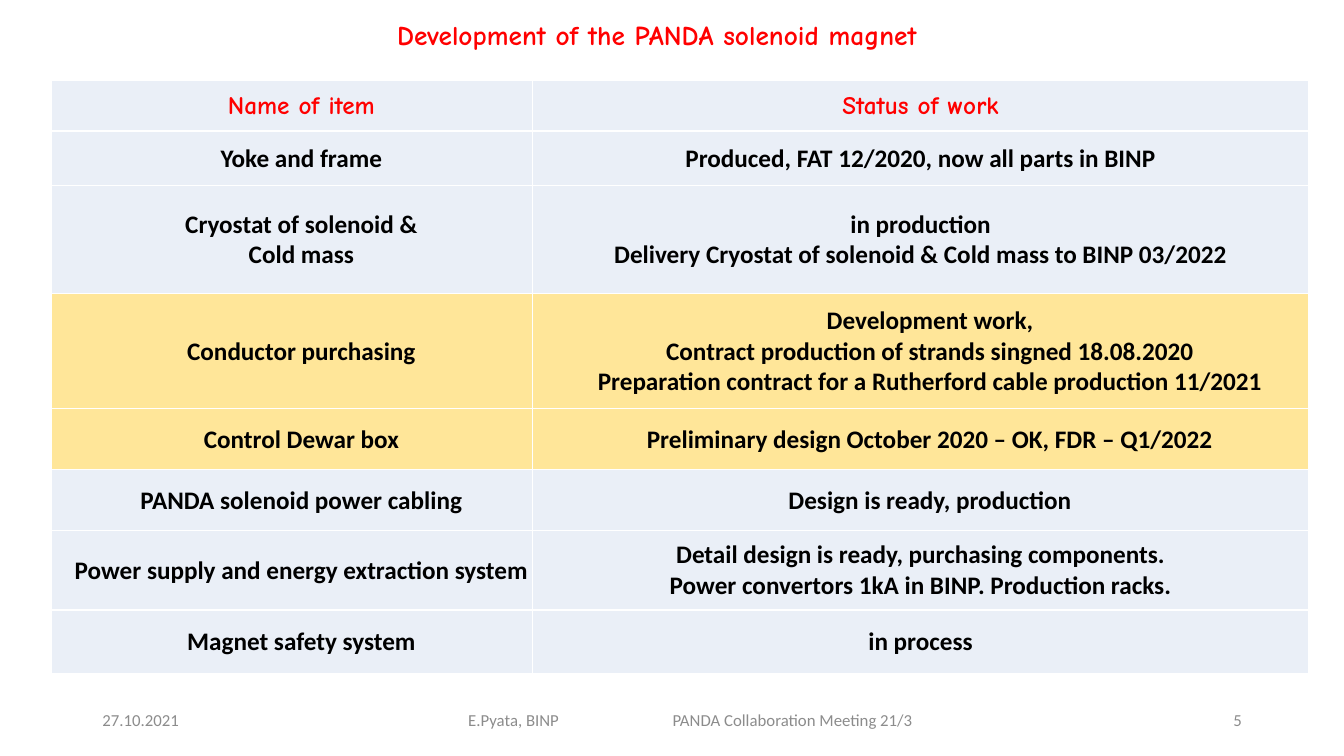
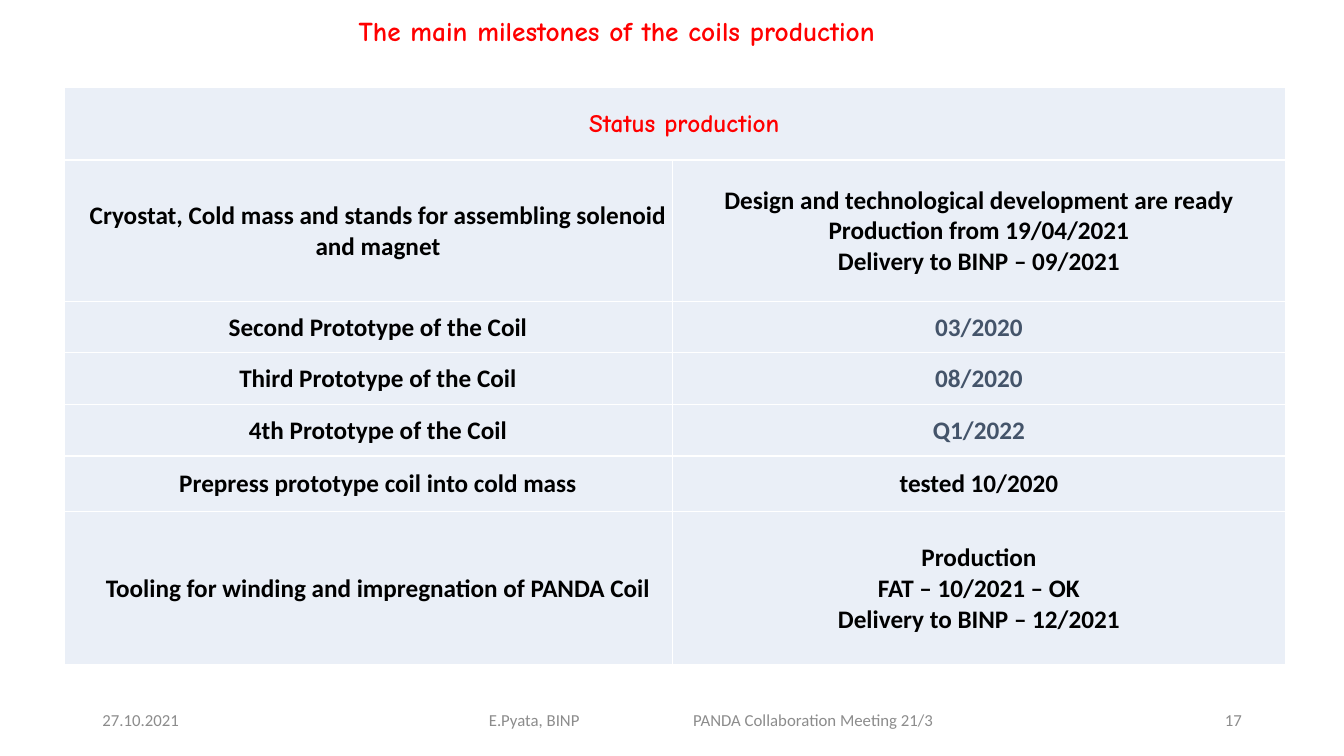
import pptx
import pptx.dml.color
import pptx.enum.text
import pptx.oxml
import pptx.oxml.ns
import pptx.util

Cm = pptx.util.Cm
Align = pptx.enum.text.PP_ALIGN
Anchor = pptx.enum.text.MSO_ANCHOR

RED = "FF0000"
BLACK = "000000"
SLATE = "44546A"
GREY = "8C8C8C"
WHITE = "FFFFFF"
PALE_BLUE = "EAEFF7"
YELLOW = "FFE699"
HEADING_FONT = "Comic Neue"
BODY_FONT = "Calibri"
FOOTER_TOP = 17.65
WIDE_INSET = 0.5
THIN_INSET = 0.03

ITEM_ROWS = [
    ("Name of item", "Status of work"),
    ("Yoke and frame", "Produced, FAT 12/2020, now all parts in BINP"),
    ("Cryostat of solenoid &\nCold mass",
     "in production\nDelivery Cryostat of solenoid & Cold mass to BINP 03/2022"),
    ("Conductor purchasing",
     "Development work,\nContract production of strands singned 18.08.2020\n"
     "Preparation contract for a Rutherford cable production 11/2021"),
    ("Control Dewar box", "Preliminary design October 2020 – OK, FDR – Q1/2022"),
    ("PANDA solenoid power cabling", "Design is ready, production"),
    ("Power supply and energy extraction system",
     "Detail design is ready, purchasing components.\n"
     "Power convertors 1kA in BINP. Production racks."),
    ("Magnet safety system", "in process"),
]

MILESTONE_ROWS = [
    ("Status production", ""),
    ("Cryostat, Cold mass and stands for assembling solenoid and magnet",
     "Design and technological development are ready\n"
     "Production from 19/04/2021\nDelivery to BINP – 09/2021"),
    ("Second Prototype of the Coil", "03/2020"),
    ("Third Prototype of the Coil", "08/2020"),
    ("4th Prototype of the Coil", "Q1/2022"),
    ("Prepress prototype coil into cold mass", "tested 10/2020"),
    ("Tooling for winding and impregnation of PANDA Coil",
     "Production\nFAT – 10/2021 – OK\nDelivery to BINP – 12/2021"),
]


def rgb(color):
    return pptx.dml.color.RGBColor.from_string(color)


def style_text(frame, font, size, color, align, bold=False, spacing=None):
    for paragraph in frame.paragraphs:
        paragraph.alignment = align
        if spacing:
            paragraph.line_spacing = spacing
        for run in paragraph.runs:
            run.font.name = font
            run.font.size = pptx.util.Pt(size)
            run.font.bold = bold
            run.font.color.rgb = rgb(color)


def add_text(slide, text, left, top, width, anchor):
    frame = slide.shapes.add_textbox(Cm(left), Cm(top), Cm(width), Cm(1)).text_frame
    frame.word_wrap = True
    frame.vertical_anchor = anchor
    frame.text = text
    return frame


def add_title(slide, text, left, top, width):
    title = add_text(slide, text, left, top, width, Anchor.TOP)
    style_text(title, HEADING_FONT, 19.5, RED, Align.CENTER, True, 0.8)


def add_footer(slide, number, author_left):
    parts = [
        ("27.10.2021", 2.33, 7.62, Align.LEFT),
        ("E.Pyata, BINP", author_left, 5, Align.LEFT),
        ("PANDA Collaboration Meeting 21/3", author_left + 5.15, 8, Align.LEFT),
        (number, 23.93, 7.62, Align.RIGHT),
    ]
    for text, left, width, align in parts:
        footer = add_text(slide, text, left, FOOTER_TOP, width, Anchor.MIDDLE)
        style_text(footer, BODY_FONT, 12, GREY, align)


def add_borders(cell):
    properties = cell._tc.get_or_add_tcPr()
    for position, side in enumerate(("lnL", "lnR", "lnT", "lnB")):
        properties.insert(position, pptx.oxml.parse_xml(
            f'<a:{side} {pptx.oxml.ns.nsdecls("a")} w="12700"><a:solidFill>'
            f'<a:srgbClr val="{WHITE}"/></a:solidFill></a:{side}>'))


def fill_cell(cell, text, fill, inset, font, color):
    cell.text_frame.text = text
    cell.vertical_anchor = Anchor.MIDDLE
    cell.margin_left = Cm(inset)
    cell.margin_right = cell.margin_top = Cm(THIN_INSET)
    cell.margin_bottom = 0
    cell.fill.solid()
    cell.fill.fore_color.rgb = rgb(fill)
    add_borders(cell)
    style_text(cell.text_frame, font, 18, color, Align.CENTER, True)


def add_status_table(slide, rows, left, top, widths, heights,
                     yellow_rows=(), indented_rows=(), slate_rows=()):
    table = slide.shapes.add_table(
        len(rows), len(widths), Cm(left), Cm(top),
        Cm(sum(widths)), Cm(sum(heights))).table
    table.first_row = table.horz_banding = False
    for column, width in zip(table.columns, widths):
        column.width = Cm(width)
    for row, height in zip(table.rows, heights):
        row.height = Cm(height)
    for row, texts in enumerate(rows):
        fill = YELLOW if row in yellow_rows else PALE_BLUE
        for column, text in enumerate(texts):
            font, color = (HEADING_FONT, RED) if row == 0 else (BODY_FONT, BLACK)
            if column == 1 and row in slate_rows:
                color = SLATE
            wide = column == 0 or row in indented_rows
            inset = WIDE_INSET if wide else THIN_INSET
            fill_cell(table.cell(row, column), text, fill, inset, font, color)
    return table


def add_blank_slide(deck):
    return deck.slides.add_slide(deck.slide_layouts[6])


def add_magnet_slide(deck):
    slide = add_blank_slide(deck)
    add_footer(slide, "5", 11.55)
    add_title(slide, "Development of the PANDA solenoid magnet", 3.71, 0.5, 25.7)
    add_status_table(
        slide, ITEM_ROWS, 1.3, 2.03, (12.12, 19.56),
        (1.27, 1.37, 2.72, 2.9, 1.55, 1.52, 2.01, 1.6),
        yellow_rows=(3, 4), indented_rows=(3, 4, 5))


def add_milestones_slide(deck):
    slide = add_blank_slide(deck)
    add_footer(slide, "17", 12.07)
    add_title(slide, "The main milestones of the coils production", 3.75, 0.4, 23.6)
    milestones = add_status_table(
        slide, MILESTONE_ROWS, 1.63, 2.2, (15.32, 15.44),
        (1.83, 3.56, 1.3, 1.3, 1.3, 1.4, 3.86), slate_rows=(2, 3, 4))
    milestones.cell(0, 0).merge(milestones.cell(0, 1))


def main():
    deck = pptx.Presentation()
    deck.slide_width, deck.slide_height = Cm(33.87), Cm(19.05)
    add_magnet_slide(deck)
    add_milestones_slide(deck)
    deck.save("out.pptx")


if __name__ == "__main__":
    main()
